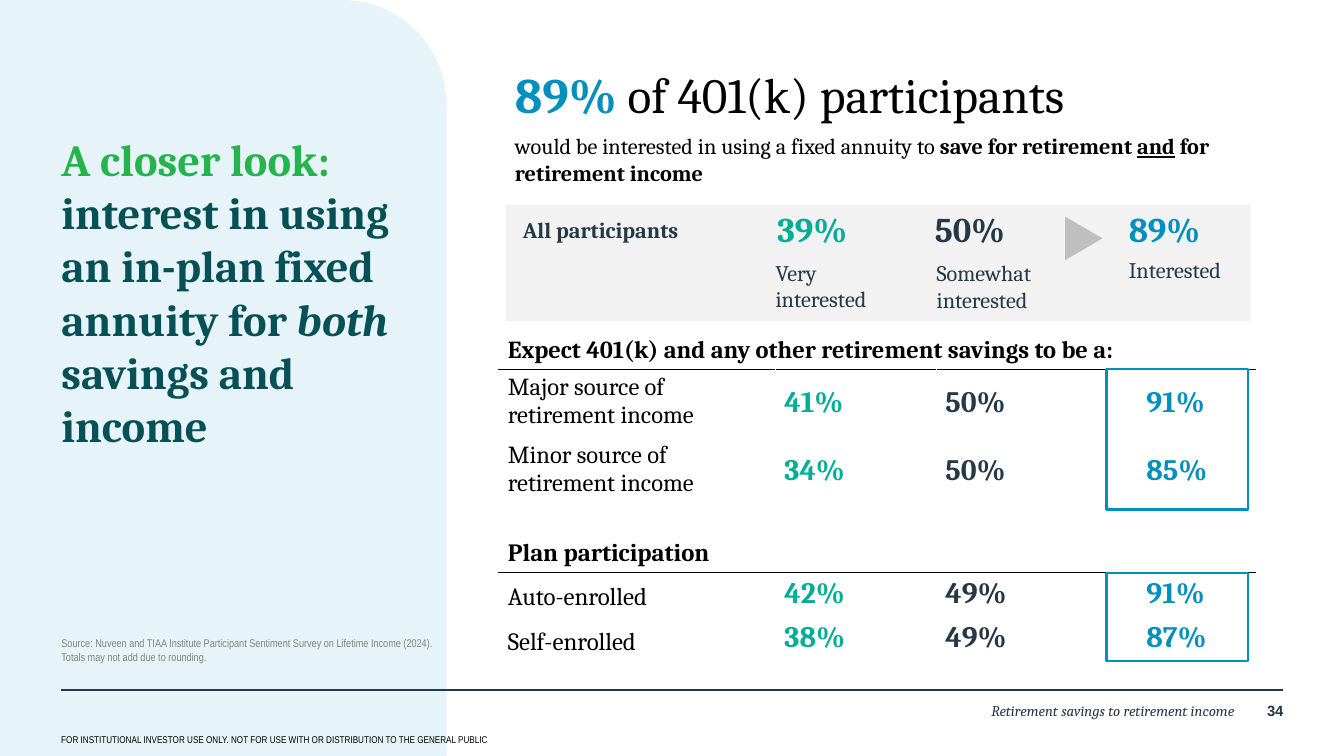
"""Build the slide on participant interest in an in-plan fixed annuity."""
from lxml.etree import SubElement
from pptx import Presentation
from pptx.dml.color import RGBColor
from pptx.enum.shapes import MSO_CONNECTOR as CONNECTOR, MSO_SHAPE as SHAPE
from pptx.enum.text import MSO_ANCHOR as ANCHOR, PP_ALIGN as ALIGN
from pptx.oxml.ns import qn
from pptx.util import Inches, Pt

COLORS = {
    "black": "000000", "white": "FFFFFF", "navy": "263746", "panel": "E6F4F9",
    "green": "25B34B", "pine": "075156", "gray": "808080", "band": "F2F2F2",
    "arrow": "BFBFBF", "teal": "00AD97", "blue": "008FBE",
}
SERIF, SANS, NARROW = "Cambria", "Arial", "Arial Narrow"

TITLE = [[("A closer look: ", "green", "b"),
          ("interest in using an in-plan fixed annuity for ", "pine", "b"),
          ("both", "pine", "bi"), (" savings and income", "pine", "b")]]
HEADLINE = [[("89% ", "blue", "b"), ("of 401(k) participants", "black", "")]]
SUBHEAD = [[("would be interested in using a fixed annuity to ", "black", ""),
            ("save for retirement ", "black", "b"), ("and", "black", "bu"),
            (" for retirement income", "black", "b")]]
SOURCE = [
    [("Source: Nuveen and TIAA Institute Participant Sentiment Survey on "
      "Lifetime Income (2024).", "gray", "")],
    [("Totals may not add due to rounding.", "gray", "")],
]
DISCLAIMER = [[("FOR INSTITUTIONAL INVESTOR USE ONLY. NOT FOR USE WITH OR "
                "DISTRIBUTION TO THE GENERAL PUBLIC", "black", "")]]
FOOTER = [[("Retirement savings to retirement income", "navy", "i")]]
PAGE = [[("34", "navy", "b")]]
ALL_LABEL = [[("All participants", "navy", "b")]]

SUMMARY = [
    ("39%", "teal", 8.74, "Very interested", (8.72, 2.91, 1.43, 0.43)),
    ("50%", "navy", 10.51, "Somewhat interested", (10.53, 2.92, 1.89, 0.43)),
    ("89%", "blue", 12.69, "Interested", (12.69, 2.88, 1.75, 0.43)),
]
ROWS = [
    ("Expect 401(k) and any other retirement savings to be a:",),
    ("Major source of retirement income", "41%", "50%", "91%"),
    ("Minor source of retirement income", "34%", "50%", "85%"),
    ("Plan participation",),
    ("Auto-enrolled", "42%", "49%", "91%"),
    ("Self-enrolled", "38%", "49%", "87%"),
]
VALUE_COLORS = ["teal", "navy", "blue"]
TABLE_LEFT, TABLE_TOP = 5.61, 3.72
COLUMN_WIDTHS = [3.11, 1.81, 2.26, 1.32]
ROW_HEIGHTS = [0.43, 0.76, 0.76, 0.76, 0.5, 0.5]
HIGHLIGHTS = [(4.15, 1.58), (6.44, 0.99)]


def rgb(name):
    return RGBColor.from_string(COLORS[name])


def write(frame, paragraphs, size, font=SERIF, align=ALIGN.LEFT):
    for index, runs in enumerate(paragraphs):
        paragraph = frame.add_paragraph() if index else frame.paragraphs[0]
        paragraph.alignment = align
        for text, color, style in runs:
            run = paragraph.add_run()
            run.text = text
            run.font.name, run.font.size = font, Pt(size)
            run.font.color.rgb = rgb(color)
            run.font.bold = "b" in style
            run.font.italic = "i" in style
            run.font.underline = "u" in style


def add_text(slide, box, paragraphs, size, font=SERIF, align=ALIGN.LEFT,
             anchor=ANCHOR.TOP, padded=False):
    frame = slide.shapes.add_textbox(*map(Inches, box)).text_frame
    frame.word_wrap = True
    frame.vertical_anchor = anchor
    if not padded:
        frame.margin_left = frame.margin_right = 0
        frame.margin_top = frame.margin_bottom = 0
    write(frame, paragraphs, size, font, align)


def add_block(slide, kind, box, fill=None, line=None):
    shape = slide.shapes.add_shape(kind, *map(Inches, box))
    shape.shadow.inherit = False
    if fill:
        shape.fill.solid()
        shape.fill.fore_color.rgb = rgb(fill)
    else:
        shape.fill.background()
    if line:
        shape.line.color.rgb = rgb(line)
        shape.line.width = Pt(2)
    else:
        shape.line.fill.background()
    return shape


def set_borders(cell, top, bottom):
    properties = cell._tc.get_or_add_tcPr()
    sides = {"a:lnL": "white", "a:lnR": "white", "a:lnT": top, "a:lnB": bottom}
    for tag, color in sides.items():
        line = SubElement(properties, qn(tag), w=str(Pt(1)))
        fill = SubElement(line, qn("a:solidFill"))
        SubElement(fill, qn("a:srgbClr"), val=COLORS[color])


def add_results(slide):
    table = slide.shapes.add_table(
        len(ROWS), len(COLUMN_WIDTHS), Inches(TABLE_LEFT), Inches(TABLE_TOP),
        Inches(sum(COLUMN_WIDTHS)), Inches(sum(ROW_HEIGHTS))).table
    table.first_row = table.horz_banding = False
    for column, width in zip(table.columns, COLUMN_WIDTHS):
        column.width = Inches(width)
    for r, (values, height) in enumerate(zip(ROWS, ROW_HEIGHTS)):
        table.rows[r].height = Inches(height)
        heading = len(values) == 1
        after_heading = r > 0 and len(ROWS[r - 1]) == 1
        size = 19.8 if r < 3 else 20.1
        short = height == 0.5
        for c in range(len(COLUMN_WIDTHS)):
            cell = table.cell(r, c)
            set_borders(cell, "black" if after_heading else "white",
                        "black" if heading else "white")
            cell.fill.background()
            if c >= len(values):
                continue
            if c == 0:
                cell.vertical_anchor = (
                    ANCHOR.BOTTOM if heading or short else ANCHOR.TOP)
                runs = [(values[0], "black", "b" if heading else "")]
                write(cell.text_frame, [runs], size)
            else:
                cell.vertical_anchor = ANCHOR.TOP if short else ANCHOR.MIDDLE
                runs = [(values[c], VALUE_COLORS[c - 1], "b")]
                write(cell.text_frame, [runs], 24)
    table.cell(0, 0).merge(table.cell(0, len(COLUMN_WIDTHS) - 1))


def add_summary(slide):
    add_block(slide, SHAPE.RECTANGLE, (5.69, 2.3, 8.37, 1.31), "band")
    add_text(slide, (5.88, 2.43, 2.24, 0.43), ALL_LABEL, 18)
    for value, color, left, label, label_box in SUMMARY:
        add_text(slide, (left, 2.34, 1.41, 0.54), [[(value, color, "b")]], 28)
        add_text(slide, label_box, [[(label, "navy", "")]], 18)
    arrow = add_block(slide, SHAPE.ISOSCELES_TRIANGLE,
                      (11.94, 2.47, 0.49, 0.42), "arrow")
    arrow.rotation = 90


def add_frame(slide):
    panel = add_block(slide, SHAPE.ROUND_1_RECTANGLE, (0, 0, 5.02, 8.5), "panel")
    panel.adjustments[0] = 0.234
    rule = slide.shapes.add_connector(
        CONNECTOR.STRAIGHT, *map(Inches, (0.69, 7.76, 14.42, 7.76)))
    rule.line.color.rgb = rgb("navy")
    rule.line.width = Pt(2)
    SubElement(rule._element.spPr, qn("a:effectLst"))
    add_text(slide, (14.03, 7.89, 0.4, 0.33), PAGE, 12, SANS, ALIGN.RIGHT)
    add_text(slide, (5.32, 7.89, 8.56, 0.4), FOOTER, 12, align=ALIGN.RIGHT)
    add_text(slide, (0.59, 8.2, 11.05, 0.24), DISCLAIMER, 8, NARROW, padded=True)


def main():
    presentation = Presentation()
    presentation.slide_width = Inches(15.11)
    presentation.slide_height = Inches(8.5)
    slide = presentation.slides.add_slide(presentation.slide_layouts[6])
    add_frame(slide)
    add_text(slide, (0.69, 1.48, 3.85, 4.24), TITLE, 36)
    add_text(slide, (0.69, 7.05, 8.81, 0.41), SOURCE, 9, NARROW,
             anchor=ANCHOR.BOTTOM)
    add_text(slide, (5.69, 0.67, 8.37, 0.77), HEADLINE, 40, padded=True)
    add_text(slide, (5.79, 1.49, 8.64, 0.74), SUBHEAD, 18)
    add_summary(slide)
    add_results(slide)
    for top, height in HIGHLIGHTS:
        add_block(slide, SHAPE.RECTANGLE, (12.44, top, 1.59, height), line="blue")
    presentation.save("out.pptx")


if __name__ == "__main__":
    main()
